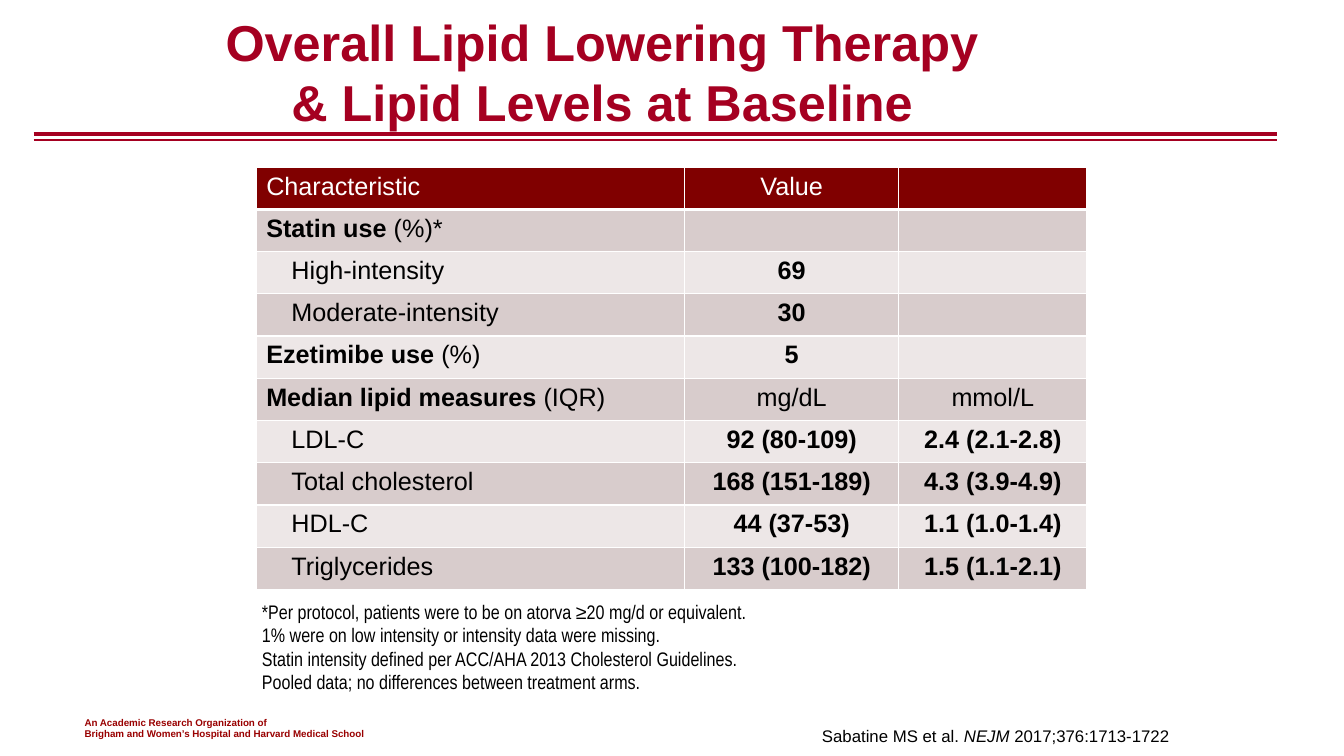
from lxml.etree import SubElement
from pptx import Presentation
from pptx.dml.color import RGBColor
from pptx.enum.shapes import MSO_CONNECTOR
from pptx.enum.text import MSO_ANCHOR, MSO_AUTO_SIZE, PP_ALIGN
from pptx.oxml.ns import qn
from pptx.util import Inches, Pt

RED, MAROON, DARK_RED = "A50021", "800000", "990000"
BLACK, WHITE = "000000", "FFFFFF"
BANDS = ["EDE7E7", "D8CCCC"]


def rgb(value):
    return RGBColor.from_string(value)


class SlideBuilder:
    COLUMNS, ROWS = 160, 90

    def __init__(self, prs):
        self.s = prs.slides.add_slide(prs.slide_layouts[6])
        self.column = prs.slide_width / self.COLUMNS
        self.row = prs.slide_height / self.ROWS

    def x(self, columns):
        return round(columns * self.column)

    def y(self, rows):
        return round(rows * self.row)

    def box(self, left, top, width, height):
        return self.x(left), self.y(top), self.x(width), self.y(height)

    def paragraph(self, p, runs, size, color, font="Arial", align=PP_ALIGN.LEFT, margin=0, indent=0):
        p.alignment = align
        pPr = p._p.get_or_add_pPr()
        pPr.set("marL", str(Inches(margin)))
        pPr.set("indent", str(Inches(indent)))
        p.font.size = Pt(size)
        for text, style in runs:
            r = p.add_run()
            r.text = text
            r.font.name, r.font.size = font, Pt(size)
            r.font.bold, r.font.italic = "b" in style, "i" in style
            r.font.color.rgb = rgb(color)

    def text(self, area, lines, size, color, anchor=MSO_ANCHOR.TOP, wrap=True, grow=True, **style):
        tf = self.s.shapes.add_textbox(*self.box(*area)).text_frame
        tf.word_wrap = wrap
        tf.vertical_anchor = anchor
        tf.auto_size = MSO_AUTO_SIZE.SHAPE_TO_FIT_TEXT if grow else MSO_AUTO_SIZE.NONE
        for i, runs in enumerate(lines):
            p = tf.add_paragraph() if i else tf.paragraphs[0]
            self.paragraph(p, runs, size, color, **style)

    def rule(self, row, weight, color):
        y = self.y(row)
        line = self.s.shapes.add_connector(MSO_CONNECTOR.STRAIGHT, self.x(4), y, self.x(152), y)
        line.line.color.rgb = rgb(color)
        line.line.width = Pt(weight)
        SubElement(line._element.spPr, qn("a:effectLst"))

    def border(self, cell, side, weight):
        tcPr = cell._tc.get_or_add_tcPr()
        ln = SubElement(tcPr, qn(f"a:ln{side}"), w=str(Pt(weight)))
        fill = SubElement(ln, qn("a:solidFill"))
        SubElement(fill, qn("a:srgbClr"), val=WHITE)

    def table(self, left, top, widths, row_height, rows):
        area = self.box(left, top, sum(widths), row_height * len(rows))
        table = self.s.shapes.add_table(len(rows), len(widths), *area).table
        table.horz_banding = False
        for column, width in zip(table.columns, widths):
            column.width = self.x(width)
        for i, (margin, *values) in enumerate(rows):
            table.rows[i].height = self.y(row_height)
            for j, runs in enumerate(values):
                cell = table.cell(i, j)
                for side in "LRTB":
                    under_header = (i, side) in [(0, "B"), (1, "T")]
                    self.border(cell, side, 3 if under_header else 1)
                cell.fill.solid()
                cell.fill.fore_color.rgb = rgb(BANDS[i % 2] if i else MAROON)
                self.paragraph(
                    cell.text_frame.paragraphs[0], runs, 18, BLACK if i else WHITE,
                    align=PP_ALIGN.CENTER if j else PP_ALIGN.LEFT,
                    margin=0 if j else margin)


def heading(label, unit, *values):
    cells = [[(value, style)] for value, style in values]
    return [0, [(label, "b"), (unit, "")], *cells, *[[]] * (2 - len(cells))]


def measure(label, *values):
    cells = [[(value, "b")] for value in values]
    return [0.25, [(label, "")], *cells, *[[]] * (2 - len(cells))]


BASELINE = [
    [0, [("Characteristic", "")], [("Value", "")], []],
    heading("Statin use ", "(%)*"),
    measure("High-intensity", "69"),
    measure("Moderate-intensity", "30"),
    heading("Ezetimibe use ", "(%)", ("5", "b")),
    heading("Median lipid measures ", "(IQR)", ("mg/dL", ""), ("mmol/L", "")),
    measure("LDL-C", "92 (80-109)", "2.4 (2.1-2.8)"),
    measure("Total cholesterol", "168 (151-189)", "4.3 (3.9-4.9)"),
    measure("HDL-C", "44 (37-53)", "1.1 (1.0-1.4)"),
    measure("Triglycerides", "133 (100-182)", "1.5 (1.1-2.1)"),
]
TITLE = ["Overall Lipid Lowering Therapy", "& Lipid Levels at Baseline"]
FOOTER = [
    "An Academic Research Organization of",
    "Brigham and Women’s Hospital and Harvard Medical School",
]
FOOTNOTES = [
    "*Per protocol, patients were to be on atorva ≥20 mg/d or equivalent.",
    "1% were on low intensity or intensity data were missing.",
    "Statin intensity defined per ACC/AHA 2013 Cholesterol Guidelines.",
    "Pooled data; no differences between treatment arms.",
]
CITATION = [("Sabatine MS et al. ", ""), ("NEJM ", "i"), ("2017;376:1713-1722", "")]


def main():
    prs = Presentation()
    prs.slide_width, prs.slide_height = Inches(13.33), Inches(7.5)
    slide = SlideBuilder(prs)
    slide.rule(16, 3, RED)
    slide.rule(16.7, 1.5, RED)
    slide.text((8.9, 84.7, 52, 4), [[(line, "b")] for line in FOOTER], 7, DARK_RED)
    slide.text((14, 1, 115.4, 15), [[(line, "b")] for line in TITLE], 36, RED,
               anchor=MSO_ANCHOR.MIDDLE, grow=False, align=PP_ALIGN.CENTER)
    slide.table(30.5, 19.9, [51, 25.5, 22.4], 5.03, BASELINE)
    slide.text((30, 70.8, 87.2, 12.5), [[(line, "")] for line in FOOTNOTES], 14, BLACK,
               font="Arial Narrow", margin=0.19, indent=-0.19)
    slide.text((95.2, 85.8, 45.2, 3.6), [CITATION], 12, BLACK, wrap=False, align=PP_ALIGN.RIGHT)
    prs.save("out.pptx")


if __name__ == "__main__":
    main()
